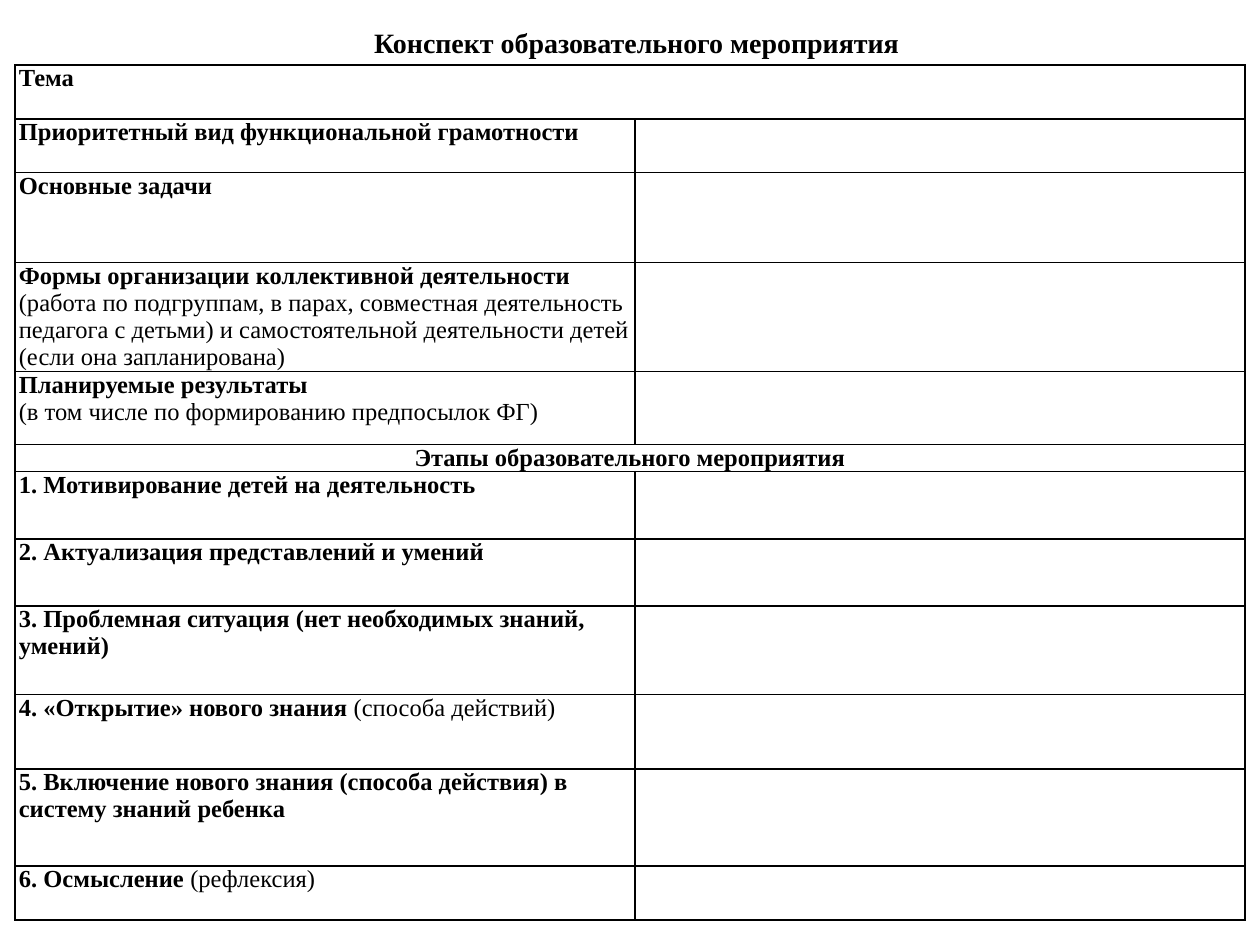
from lxml.etree import SubElement
from pptx import Presentation
from pptx.dml.color import RGBColor
from pptx.enum.text import MSO_ANCHOR, MSO_AUTO_SIZE, PP_ALIGN
from pptx.oxml.ns import qn
from pptx.util import Pt

BLACK = RGBColor(0, 0, 0)
FONT = "Times New Roman"
COLS = [354.3, 348.5]
SPANS = {0, 5}
ROWS = [
    (30.9, [[("Тема", True)]]),
    (30.6, [[("Приоритетный вид функциональной грамотности", True)]]),
    (51.4, [[("Основные задачи", True)]]),
    (62.2, [[("Формы организации коллективной деятельности", True),
             (" (работа по подгруппам, в парах, совместная деятельность педагога с детьми)"
              " и самостоятельной деятельности детей (если она запланирована)", False)]]),
    (41.7, [[("Планируемые результаты", True)],
            [("(в том числе по формированию предпосылок ФГ)", False)]]),
    (15.4, [[("Этапы образовательного мероприятия", True)]]),
    (38.5, [[("1. Мотивирование детей на деятельность", True)]]),
    (38.3, [[("2. Актуализация представлений и умений", True)]]),
    (50.6, [[("3. Проблемная ситуация (нет необходимых знаний, умений)", True)]]),
    (42.6, [[("4. «Открытие» нового знания", True), (" (способа действий)", False)]]),
    (55.4, [[("5. Включение нового знания (способа действия) в систему знаний ребенка", True)]]),
    (30.9, [[("6. Осмысление", True), (" (рефлексия)", False)]]),
]


def add_run(para, text, size, bold):
    run = para.add_run()
    run.text = text
    font = run.font
    font.name = FONT
    font.size = Pt(size)
    font.bold = bold
    font.color.rgb = BLACK


def add_title(slide):
    title = slide.shapes.title
    title.left, title.top = Pt(206.6), Pt(10.1)
    title.width, title.height = Pt(345.6), Pt(46)
    frame = title.text_frame
    frame.word_wrap = True
    frame.auto_size = MSO_AUTO_SIZE.NONE
    frame.vertical_anchor = MSO_ANCHOR.TOP
    frame.margin_top = Pt(4.6)
    para = frame.paragraphs[0]
    para.alignment = PP_ALIGN.LEFT
    add_run(para, "Конспект образовательного мероприятия", 16, True)


def add_edges(cell):
    props = cell._tc.get_or_add_tcPr()
    for side in ("lnL", "lnR", "lnT", "lnB"):
        line = SubElement(props, qn(f"a:{side}"), w=str(Pt(1)))
        fill = SubElement(line, qn("a:solidFill"))
        SubElement(fill, qn("a:srgbClr"), val=str(BLACK))


def style_cell(cell):
    add_edges(cell)
    cell.fill.background()
    cell.margin_left = cell.margin_right = Pt(2.2)
    cell.margin_top = cell.margin_bottom = 0
    cell.text_frame.paragraphs[0].font.size = Pt(14)


def fill_cell(cell, lines, align):
    frame = cell.text_frame
    for i, runs in enumerate(lines):
        para = frame.add_paragraph() if i else frame.paragraphs[0]
        para.alignment = align
        for text, bold in runs:
            add_run(para, text, 14, bold)


def add_plan(slide):
    high = sum(size for size, _ in ROWS)
    table = slide.shapes.add_table(len(ROWS), len(COLS), Pt(8.6), Pt(37.2),
                                   Pt(sum(COLS)), Pt(high)).table
    table.first_row = table.horz_banding = False
    for col, width in zip(table.columns, COLS):
        col.width = Pt(width)
    for i, (size, lines) in enumerate(ROWS):
        table.rows[i].height = Pt(size)
        for cell in table.rows[i].cells:
            style_cell(cell)
        if i in SPANS:
            table.cell(i, 0).merge(table.cell(i, 1))
        align = PP_ALIGN.CENTER if i == 5 else PP_ALIGN.LEFT
        fill_cell(table.cell(i, 0), lines, align)


def main():
    deck = Presentation()
    deck.slide_width, deck.slide_height = Pt(720), Pt(540)
    slide = deck.slides.add_slide(deck.slide_layouts[5])
    add_plan(slide)
    add_title(slide)
    deck.save("out.pptx")


if __name__ == "__main__":
    main()
